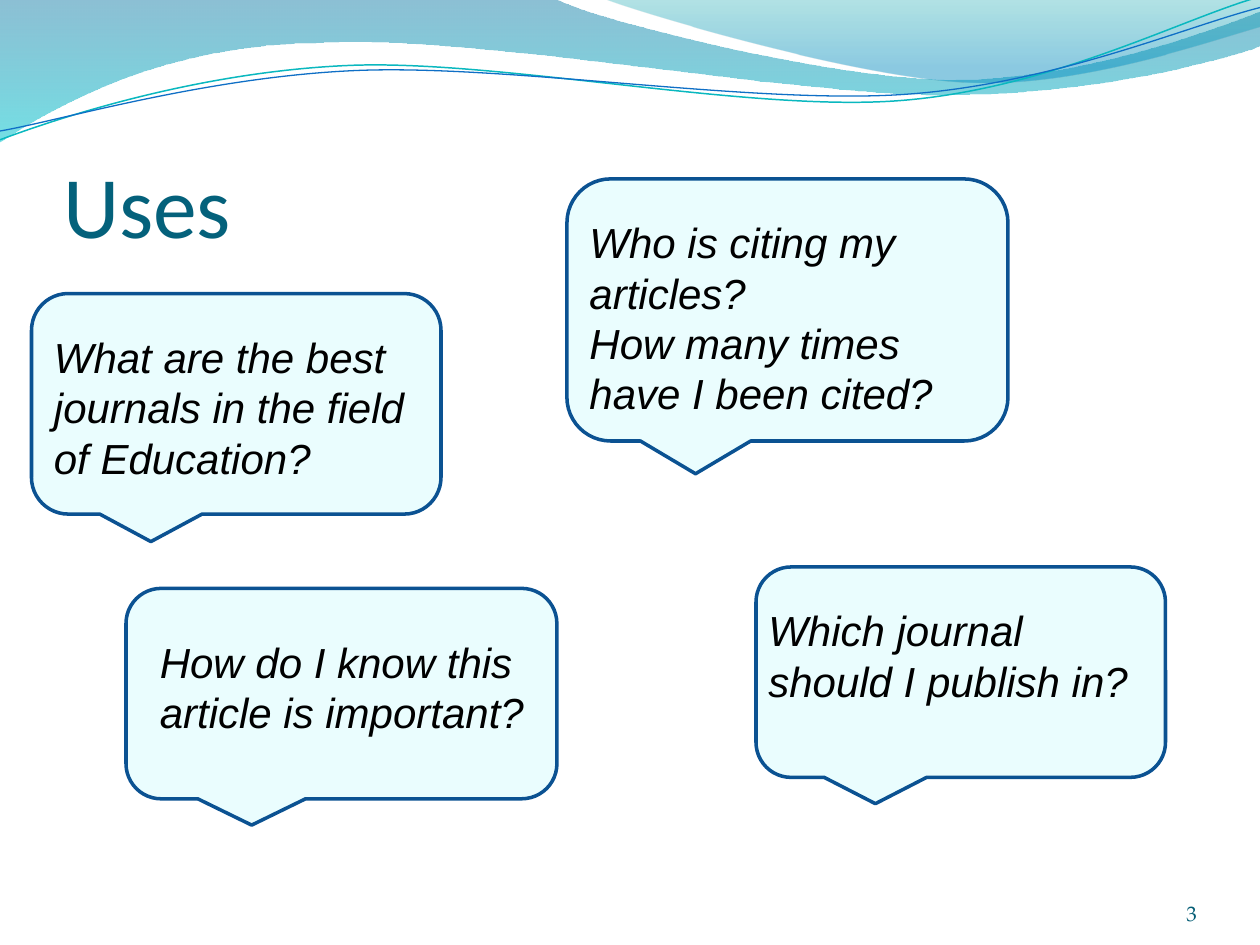
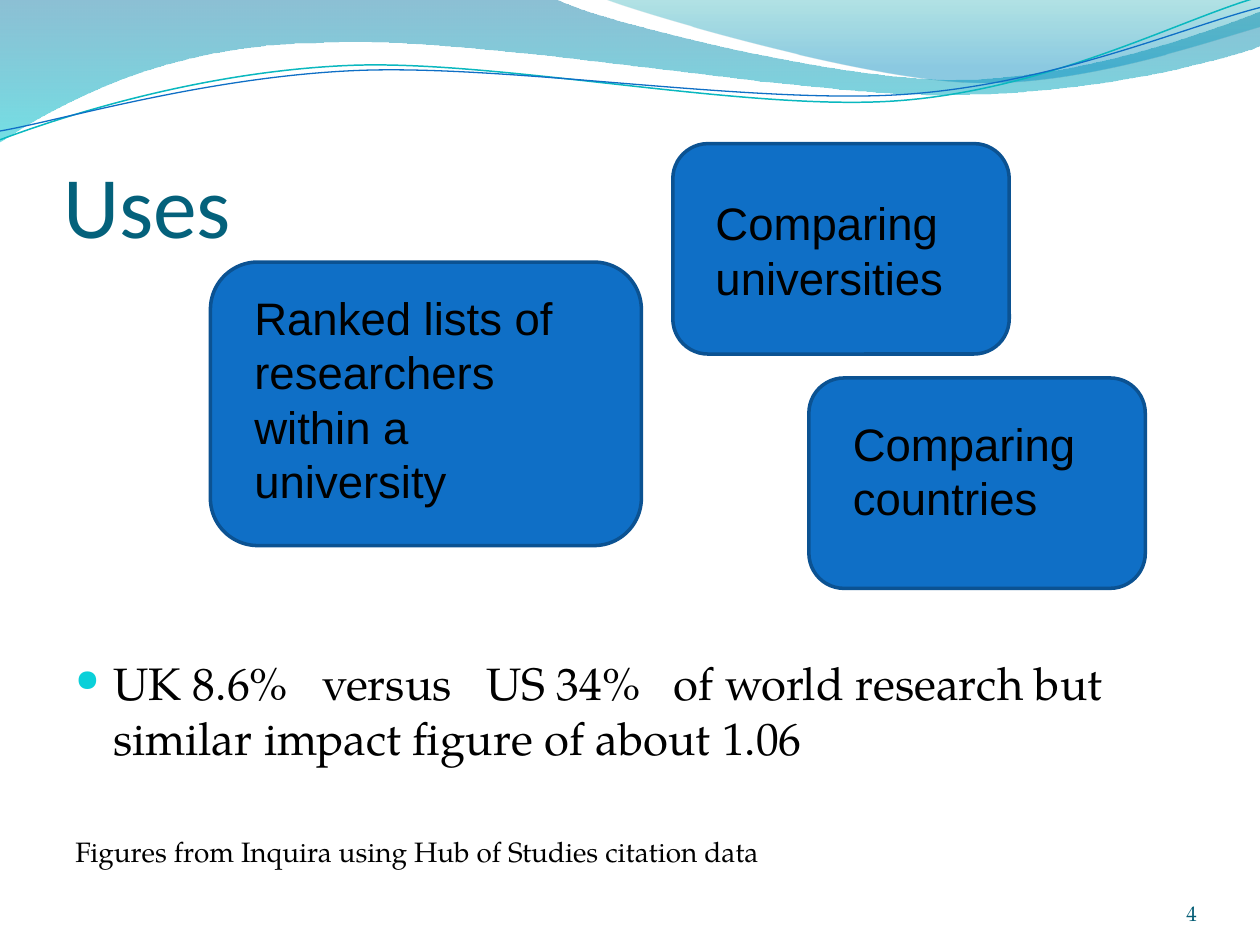
from dataclasses import dataclass

from lxml import etree
from pptx import Presentation
from pptx.dml.color import RGBColor
from pptx.enum.shapes import MSO_SHAPE
from pptx.enum.text import MSO_ANCHOR, MSO_AUTO_SIZE, PP_ALIGN
from pptx.oxml.ns import qn
from pptx.util import Inches, Pt

CALLOUT = MSO_SHAPE.ROUNDED_RECTANGULAR_CALLOUT
ROUNDED = MSO_SHAPE.ROUNDED_RECTANGLE
BOTTOM, TOP = MSO_ANCHOR.BOTTOM, MSO_ANCHOR.TOP
LEFT, RIGHT = PP_ALIGN.LEFT, PP_ALIGN.RIGHT
FIXED = MSO_AUTO_SIZE.NONE


@dataclass(frozen=True)
class Theme:
    sans: str = "Arial"
    head: str = "Calibri"
    serif: str = "TeX Gyre Pagella"
    ink: str = "000000"
    title: str = "04617B"
    number: str = "045D75"
    edge: str = "0B5292"
    pale: str = "94F5FA"
    blue: str = "0F6FC6"
    teal: str = "0AB8BF"
    dot: str = "0BD0D9"
    title_size: int = 50
    body_size: int = 26
    ask_size: int = 24
    note_size: int = 16
    number_size: int = 12


THEME = Theme()
TITLE_BOX = (0.5, 0.78, 9, 1.25)
BODY_BOX = (0.5, 2.12, 9, 4.8)
NUMBER_BOX = (8.67, 6.95, 0.83, 0.4)
PAD = (0.1, 0.05, 0.1, 0.05)

# Waves: start point, then either a line end (2 values) or a cubic curve (6)
BAND = [(0, -0.01), (4.4, -0.01), (4.76, 0.17, 6.64, 0.63, 7.58, 0.63),
        (8.53, 0.63, 9.58, 0.26, 10, 0.09), (10.01, 0.36),
        (9.83, 0.44, 8.7, 0.76, 7.46, 0.75),
        (6.22, 0.75, 3.82, 0.28, 2.57, 0.34),
        (1.29, 0.35, 0.46, 0.83, -0.01, 1.13), (0, -0.01)]
SWEEP = [(4.79, -0.01), (5.09, 0.11, 6.82, 0.62, 7.69, 0.65),
         (8.56, 0.69, 9.61, 0.32, 10, 0.21), (10, 0), (4.79, -0.01)]
UPPER = [(0, 1.11), (0.48, 0.93, 1.58, 0.57, 2.77, 0.52),
         (3.95, 0.47, 5.93, 0.89, 7.13, 0.8),
         (8.33, 0.71, 9.38, 0.15, 9.98, -0.02)]
LOWER = [(0, 1.04), (0.47, 0.96, 1.64, 0.61, 2.83, 0.56),
         (4.03, 0.51, 5.97, 0.83, 7.17, 0.75),
         (8.36, 0.67, 9.41, 0.21, 10, 0.06)]

# Gradient stops: position, colour, opacity in percent
FILLS = [(BAND, [(0, "0074A1", 45), (1, "00C6CF", 55)]),
         (SWEEP, [(0, "00A1A9", 30), (0.8, "008BBF", 45)])]
LINES = [(UPPER, THEME.teal, 0.85), (LOWER, THEME.blue, 0.75)]

# Each entry: box of the shape, then offset and size of its text
ASKS = [
    ((0.25, 2.33, 3.25, 1.75), (0.08, 0.25, 3, 1.31),
     ["What are the best journals in the field of Education?"]),
    ((4.5, 1.42, 3.5, 2.08), (0.08, 0.25, 3.25, 1.72),
     ["Who is citing my articles?", "How many times have I been cited?"]),
    ((1, 4.67, 3.42, 1.67), (0.17, 0.33, 3.17, 0.91),
     ["How do I know this article is important?"]),
    ((6, 4.5, 3.25, 1.67), (0, 0.25, 3.17, 0.91),
     ["Which journal should I publish in?"]),
]
CARDS = [
    ((1.67, 2.08, 3.42, 2.25), (0.25, 0.17, 2.75, 1.85),
     ["Ranked lists of researchers within a university"]),
    ((5.34, 1.14, 2.67, 1.67), (0.24, 0.36, 2.25, 0.98),
     ["Comparing universities"]),
    ((6.42, 3, 2.67, 1.67), (0.25, 0.25, 2.17, 0.98),
     ["Comparing countries"]),
]
FACT = ("UK 8.6%\tversus\tUS 34%\tof world research but "
        "similar impact figure of about 1.06")
NOTE = "Figures from Inquira using Hub of Studies citation data"
STOPS = (1.96, 3.26, 4.75)


def inch(box):
    return [Inches(v) for v in box]


def assign(item, values):
    for name, value in values.items():
        setattr(item, name, value)


def style(par, font, size, color, italic=False, align=LEFT):
    par.alignment = align
    assign(par.font, {"name": font, "size": Pt(size), "italic": italic})
    par.font.color.rgb = RGBColor.from_string(color)


def frame(shape, lines, pad=PAD, anchor=TOP):
    """Fill the text frame of a shape and return its paragraphs."""
    text = shape.text_frame
    sides = ("margin_left", "margin_top", "margin_right", "margin_bottom")
    assign(text, dict(zip(sides, inch(pad))))
    assign(text, {"word_wrap": True, "auto_size": FIXED,
                  "vertical_anchor": anchor, "text": "\n".join(lines)})
    return text.paragraphs


def fade(shape, levels):
    """Set the opacity of the fill colours in order."""
    for color, level in zip(shape._element.spPr.iter(qn("a:srgbClr")), levels):
        etree.SubElement(color, qn("a:alpha")).set("val", str(level * 1000))


def bend(shape, route):
    """Turn the straight parts of an outline into its cubic curves."""
    sides = list(shape._element.spPr.iter(qn("a:lnTo")))
    for side, part in zip(sides, route[1:]):
        if len(part) == 2:
            continue
        side.tag = qn("a:cubicBezTo")
        for spot in (0, 2):
            x, y = inch(part[spot:spot + 2])
            point = etree.Element(qn("a:pt"), x=str(x - shape.left),
                                  y=str(y - shape.top))
            side.insert(spot // 2, point)


def outline(slide, route, close):
    first, *rest = [tuple(inch(part[-2:])) for part in route]
    pen = slide.shapes.build_freeform(*first)
    pen.add_line_segments(rest, close=close)
    shape = pen.convert_to_shape()
    bend(shape, route)
    shape.shadow.inherit = False
    return shape


def waves(slide):
    # Tinted bands
    for route, stops in FILLS:
        shape = outline(slide, route, True)
        shape.fill.gradient()
        shape.fill.gradient_angle = 270
        for stop, (place, color, _) in zip(shape.fill.gradient_stops, stops):
            stop.position = place
            stop.color.rgb = RGBColor.from_string(color)
        fade(shape, [level for _, _, level in stops])
        shape.line.fill.background()
    # Thin lines
    for route, color, width in LINES:
        shape = outline(slide, route, False)
        shape.fill.background()
        shape.line.color.rgb = RGBColor.from_string(color)
        shape.line.width = Pt(width)


def base(deck, title, number):
    """Add a slide with waves, title and page number."""
    slide = deck.slides.add_slide(deck.slide_layouts[5])
    waves(slide)
    # Title, in front of the waves
    head = slide.shapes.title
    slide.shapes._spTree.append(head._element)
    assign(head, dict(zip(("left", "top", "width", "height"),
                          inch(TITLE_BOX))))
    par = frame(head, [title], (0, 0.05, 0, 0), BOTTOM)[0]
    style(par, THEME.head, THEME.title_size, THEME.title)
    # Page number
    foot = slide.shapes.add_textbox(*inch(NUMBER_BOX))
    par = frame(foot, [str(number)], (0, 0, 0, 0), BOTTOM)[0]
    style(par, THEME.serif, THEME.number_size, THEME.number, align=RIGHT)
    return slide


def panel(slide, kind, box, color):
    shape = slide.shapes.add_shape(kind, *inch(box))
    shape.shadow.inherit = False
    shape.fill.solid()
    shape.fill.fore_color.rgb = RGBColor.from_string(color)
    shape.line.color.rgb = RGBColor.from_string(THEME.edge)
    shape.line.width = Pt(2)
    return shape


def label(slide, box, inner, lines, size, italic=False):
    """Place text at an offset inside the box of its panel."""
    left, top, width, height = inner
    area = (box[0] + left, box[1] + top, width, height)
    note = slide.shapes.add_textbox(*inch(area))
    for par in frame(note, lines):
        style(par, THEME.sans, size, THEME.ink, italic)


def hang(par, bullet=False):
    """Give a hanging indent, with a bullet and tab stops if asked."""
    props = par._p.get_or_add_pPr()
    props.set("marL", str(Inches(0.3)))
    props.set("indent", str(-Inches(0.3)))
    if not bullet:
        return
    tint = etree.Element(qn("a:buClr"))
    etree.SubElement(tint, qn("a:srgbClr")).set("val", THEME.dot)
    size = etree.Element(qn("a:buSzPct"), val="67000")
    mark = etree.Element(qn("a:buChar"), char="●")
    tabs = etree.Element(qn("a:tabLst"))
    for stop in STOPS:
        etree.SubElement(tabs, qn("a:tab"), pos=str(Inches(stop)), algn="l")
    for spot, item in enumerate((tint, size, mark, tabs)):
        props.insert(spot, item)


def facts(slide, box):
    body = slide.shapes.add_textbox(*inch(box))
    fact, note = frame(body, [FACT, NOTE], (0.1, 0.05, 0.1, 0.03), BOTTOM)
    style(fact, THEME.serif, THEME.body_size, THEME.ink)
    style(note, THEME.serif, THEME.note_size, THEME.ink)
    hang(fact, bullet=True)
    hang(note)
    note.space_before = Pt(40)


def questions(deck):
    slide = base(deck, "Uses", 3)
    for box, _, _ in ASKS:
        fade(panel(slide, CALLOUT, box, THEME.pale), [19])
    for box, inner, lines in ASKS:
        label(slide, box, inner, lines, THEME.ask_size, italic=True)


def rankings(deck):
    slide = base(deck, "Uses", 4)
    facts(slide, BODY_BOX)
    for box, inner, lines in CARDS:
        panel(slide, ROUNDED, box, THEME.blue)
        label(slide, box, inner, lines, THEME.body_size)


def main():
    deck = Presentation()
    deck.slide_width, deck.slide_height = Inches(10), Inches(7.5)
    questions(deck)
    rankings(deck)
    deck.save("out.pptx")


if __name__ == "__main__":
    main()
